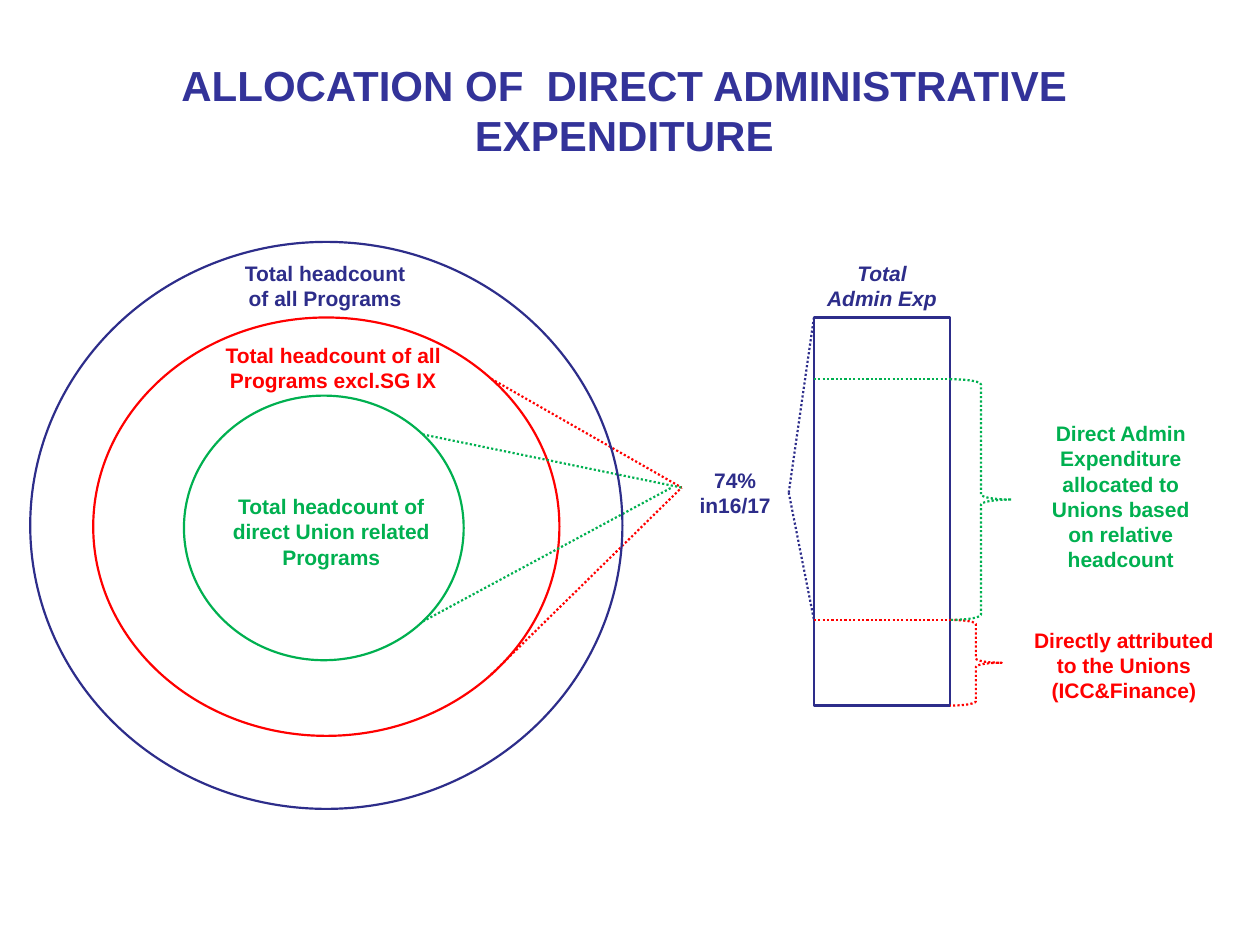
from math import sqrt

from lxml import etree
from pptx import Presentation
from pptx.dml.color import RGBColor
from pptx.enum.dml import MSO_LINE
from pptx.enum.shapes import MSO_CONNECTOR, MSO_SHAPE
from pptx.enum.text import MSO_AUTO_SIZE, PP_ALIGN
from pptx.oxml.ns import qn
from pptx.util import Inches, Pt

OVAL = MSO_SHAPE.OVAL
RECTANGLE = MSO_SHAPE.RECTANGLE
BRACE = MSO_SHAPE.RIGHT_BRACE
STRAIGHT = MSO_CONNECTOR.STRAIGHT
DOTTED = MSO_LINE.ROUND_DOT
FIT_TEXT = MSO_AUTO_SIZE.SHAPE_TO_FIT_TEXT
CENTER = PP_ALIGN.CENTER

THEME = {
    "font": "Arial",
    "title_size": 24,
    "label_size": 12,
    "line_width": 1.25,
    "title": RGBColor(0x33, 0x33, 0x99),
    "total": RGBColor(0x2D, 0x2D, 0x8A),
    "direct": RGBColor(0xFF, 0x00, 0x00),
    "union": RGBColor(0x00, 0xB0, 0x50),
}

WIDTH, HEIGHT = Inches(10), Inches(7.5)

TITLE = ("ALLOCATION OF  DIRECT ADMINISTRATIVE EXPENDITURE", "title", (8, 5.6, 83.1, 12.13))

LABELS = [
    ("Total headcount of direct Union related Programs", "union", (16.1, 51.6, 20.4, 9.47)),
    ("Total headcount of all Programs", "total", (17.7, 26.93, 16.2, 6.67)),
    ("Total headcount of all Programs excl.SG IX", "direct", (16.2, 35.6, 20.5, 6.67)),
    ("74% in16/17", "total", (54.1, 48.8, 8.5, 6.67)),
    ("Directly attributed to the Unions (ICC&Finance)", "direct", (80.3, 65.73, 17.8, 9.47)),
    ("Direct Admin Expenditure allocated to Unions based on relative headcount",
     "union", (81.9, 43.87, 14.1, 17.47)),
]

HEADCOUNTS = [
    ("direct", (7.4, 33.6, 37, 44.27), (54.1, 54.1)),
    ("union", (14.6, 41.87, 22.2, 28), (54.1, 53.3)),
    ("total", (2.4, 25.6, 47, 60), ()),
]
RATIO_LEVEL = 51.6

BAR_LABEL = "Total Admin Exp"
BAR_LEFT, BAR_TOP, BAR_WIDTH, BAR_HEIGHT = BAR = (64.6, 33.6, 10.8, 41.07)
BAR_RIGHT, BAR_BOTTOM = BAR_LEFT + BAR_WIDTH, BAR_TOP + BAR_HEIGHT
BAR_LABEL_HEIGHT = 6.67
ALLOCATED_LEVEL, ATTRIBUTED_LEVEL = 40.13, 65.6
PARTS = [
    ("direct", ATTRIBUTED_LEVEL, BAR_BOTTOM, 4.1),
    ("union", ALLOCATED_LEVEL, ATTRIBUTED_LEVEL, 4.9),
]
FAN_TIP = (62.6, 52.13)


def across(share):
    return round(WIDTH * share / 100)


def down(share):
    return round(HEIGHT * share / 100)


def place(box):
    left, top, width, height = box
    return across(left), down(top), across(width), down(height)


def style_line(line, color, dotted):
    line.color.rgb = THEME[color]
    line.width = Pt(THEME["line_width"])
    if dotted:
        line.dash_style = DOTTED


def add_outline(slide, kind, box, color, dotted=False):
    shape = slide.shapes.add_shape(kind, *place(box))
    shape.shadow.inherit = False
    shape.fill.background()
    style_line(shape.line, color, dotted)


def add_dotted_line(slide, start, end, color):
    connector = slide.shapes.add_connector(
        STRAIGHT, across(start[0]), down(start[1]), across(end[0]), down(end[1]))
    style_line(connector.line, color, True)
    etree.SubElement(connector._element.spPr, qn("a:effectLst"))


def add_text(slide, text, color, box, size, italic=False):
    text_frame = slide.shapes.add_textbox(*place(box)).text_frame
    text_frame.word_wrap = True
    text_frame.auto_size = FIT_TEXT
    text_frame.text = text
    paragraph = text_frame.paragraphs[0]
    paragraph.alignment = CENTER
    font = paragraph.runs[0].font
    font.name = THEME["font"]
    font.size = Pt(THEME[size])
    font.color.rgb = THEME[color]
    font.bold = True
    font.italic = italic


def add_headcounts(slide):
    for color, box, tips in HEADCOUNTS:
        add_outline(slide, OVAL, box, color)
        left, top, width, height = box
        reach_x, reach_y = width / sqrt(8), height / sqrt(8)
        center_x, center_y = left + width / 2, top + height / 2
        for side, tip in zip((-1, 1), tips):
            start = (center_x + reach_x, center_y + side * reach_y)
            add_dotted_line(slide, start, (tip, RATIO_LEVEL), color)


def add_bar(slide):
    add_outline(slide, RECTANGLE, BAR, "total")
    label_box = (BAR_LEFT, BAR_TOP - BAR_LABEL_HEIGHT, BAR_WIDTH, BAR_LABEL_HEIGHT)
    add_text(slide, BAR_LABEL, "total", label_box, "label_size", italic=True)
    for level in (BAR_TOP, ATTRIBUTED_LEVEL):
        add_dotted_line(slide, FAN_TIP, (BAR_LEFT, level), "total")
    for color, top, bottom, depth in PARTS:
        add_dotted_line(slide, (BAR_LEFT, top), (BAR_RIGHT, top), color)
        add_outline(slide, BRACE, (BAR_RIGHT, top, depth, bottom - top), color, True)


def main():
    presentation = Presentation()
    presentation.slide_width, presentation.slide_height = WIDTH, HEIGHT
    slide = presentation.slides.add_slide(presentation.slide_layouts[6])
    add_text(slide, *TITLE, "title_size")
    add_headcounts(slide)
    add_bar(slide)
    for label in LABELS:
        add_text(slide, *label, "label_size")
    presentation.save("out.pptx")


if __name__ == "__main__":
    main()
